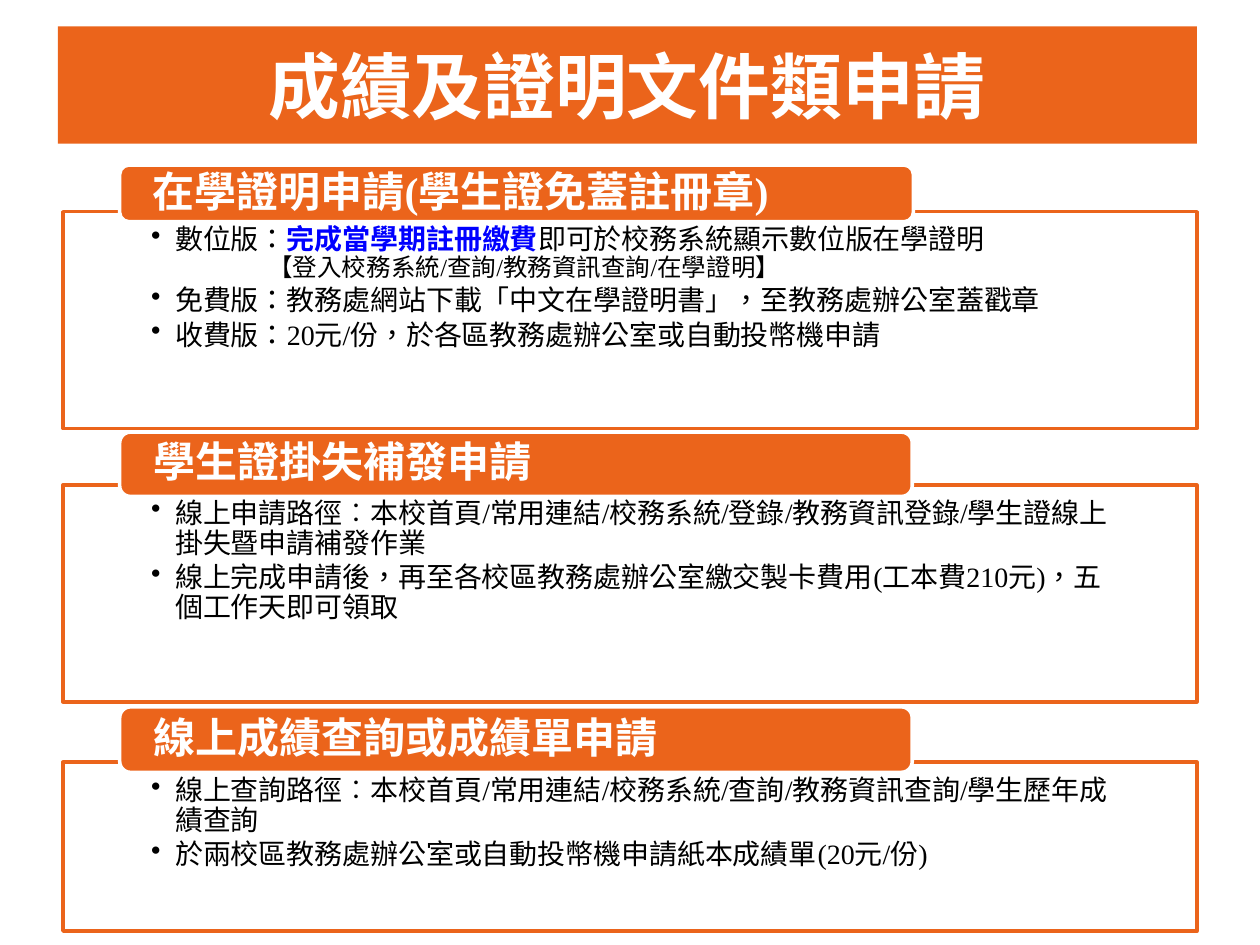
"""Build the slide on applying for transcripts and certificates."""
from lxml import etree
from pptx import Presentation
from pptx.dml.color import RGBColor
from pptx.enum.lang import MSO_LANGUAGE_ID
from pptx.enum.shapes import MSO_SHAPE
from pptx.enum.text import MSO_ANCHOR, PP_ALIGN
from pptx.oxml.ns import qn
from pptx.util import Inches, Pt

RECTANGLE = MSO_SHAPE.RECTANGLE
ROUNDED = MSO_SHAPE.ROUNDED_RECTANGLE
TOP, MIDDLE = MSO_ANCHOR.TOP, MSO_ANCHOR.MIDDLE
LEFT, CENTER = PP_ALIGN.LEFT, PP_ALIGN.CENTER
CHINESE = MSO_LANGUAGE_ID.TRADITIONAL_CHINESE
ORANGE = RGBColor(0xEB, 0x64, 0x1B)
WHITE = RGBColor(0xFF, 0xFF, 0xFF)
BLACK = RGBColor(0x00, 0x00, 0x00)
BLUE = RGBColor(0x00, 0x00, 0xFF)
SERIF, SANS, MONO = "Times New Roman", "Noto Sans CJK SC", "Noto Sans Mono"


def add_box(page, kind, place, fill, line, insets, anchor):
    box = page.shapes.add_shape(kind, *[Inches(value) for value in place])
    box.shadow.inherit = False
    box.fill.solid()
    box.fill.fore_color.rgb = fill
    if line is None:
        box.line.fill.background()
    else:
        box.line.color.rgb = line
        box.line.width = Pt(2)
    frame = box.text_frame
    frame.word_wrap = True
    frame.vertical_anchor = anchor
    frame.margin_left = frame.margin_right = Inches(insets[0])
    frame.margin_top, frame.margin_bottom = Inches(insets[1]), Inches(insets[2])
    return frame


def write(para, text, size=16, font=SERIF, color=BLACK, bold=False, align=LEFT, spacing=0.9):
    para.alignment = align
    para.line_spacing = spacing
    span = para.add_run()
    span.text = text
    span.font.size = Pt(size)
    span.font.name = font
    span.font.bold = bold
    span.font.color.rgb = color
    span.font.language_id = CHINESE


SECTIONS = [
    (
        "在學證明申請(學生證免蓋註冊章)",
        (0.95, 1.31, 6.3, 0.45),
        (0.5, 1.68, 9, 1.72),
        [
            [
                ("數位版：", {}),
                ("完成當學期註冊繳費", {"color": BLUE, "bold": True}),
                ("即可於校務系統顯示數位版在學證明", {}),
            ],
            [
                ("【", {"size": 14, "font": SANS}),
                ("登入校務系統/查詢/教務資訊查詢/在學證明", {"size": 14}),
                ("】", {"size": 14, "font": SANS}),
            ],
            [("免費版：教務處網站下載「中文在學證明書」，至教務處辦公室蓋戳章", {})],
            [("收費版：20元/份，於各區教務處辦公室或自動投幣機申請", {})],
        ],
    ),
    (
        "學生證掛失補發申請",
        (0.95, 3.43, 6.29, 0.51),
        (0.5, 3.85, 9, 1.72),
        [
            [("線上申請路徑︰本校首頁/常用連結/校務系統/登錄/教務資訊登錄/學生證線上掛失暨申請補發作業", {})],
            [("線上完成申請後，再至各校區教務處辦公室繳交製卡費用(工本費210元)，五個工作天即可領取", {})],
        ],
    ),
    (
        "線上成績查詢或成績單申請",
        (0.95, 5.61, 6.29, 0.52),
        (0.5, 6.05, 9, 1.34),
        [
            [("線上查詢路徑︰本校首頁/常用連結/校務系統/查詢/教務資訊查詢/學生歷年成績查詢", {})],
            [("於兩校區教務處辦公室或自動投幣機申請紙本成績單(20元/份)", {})],
        ],
    ),
]

deck = Presentation()
deck.slide_width, deck.slide_height = Inches(10), Inches(7.5)
page = deck.slides.add_slide(deck.slide_layouts[6])

for heading, tab_place, body_place, items in SECTIONS:
    body = add_box(page, RECTANGLE, body_place, WHITE, ORANGE, (0.7, 0.11, 0.12), TOP)
    for index, item in enumerate(items):
        para = body.paragraphs[0] if index == 0 else body.add_paragraph()
        is_path = item[0][0] == "【"
        followed_by_path = index + 1 < len(items) and items[index + 1][0][0] == "【"
        properties = para._p.get_or_add_pPr()
        properties.set("marL", str(Inches(0.93 if is_path else 0.19)))
        properties.set("indent", str(Inches(0 if is_path else -0.19)))
        if is_path:
            etree.SubElement(properties, qn("a:buNone"))
        else:
            etree.SubElement(properties, qn("a:buChar"), char="•")
        para.space_after = Pt(0 if followed_by_path else 2.4)
        for text, style in item:
            write(para, text, **style)
    tab = add_box(page, ROUNDED, tab_place, ORANGE, WHITE, (0.24, 0, 0), MIDDLE)
    write(tab.paragraphs[0], heading, size=24, color=WHITE, bold=True)

title = add_box(page, RECTANGLE, (0.46, 0.21, 9.04, 0.93), ORANGE, None, (0.05, 0.05, 0.05), MIDDLE)
write(title.paragraphs[0], "成績及證明文件類申請", size=41, font=MONO, color=WHITE, bold=True,
      align=CENTER, spacing=1.0)

deck.save("out.pptx")
